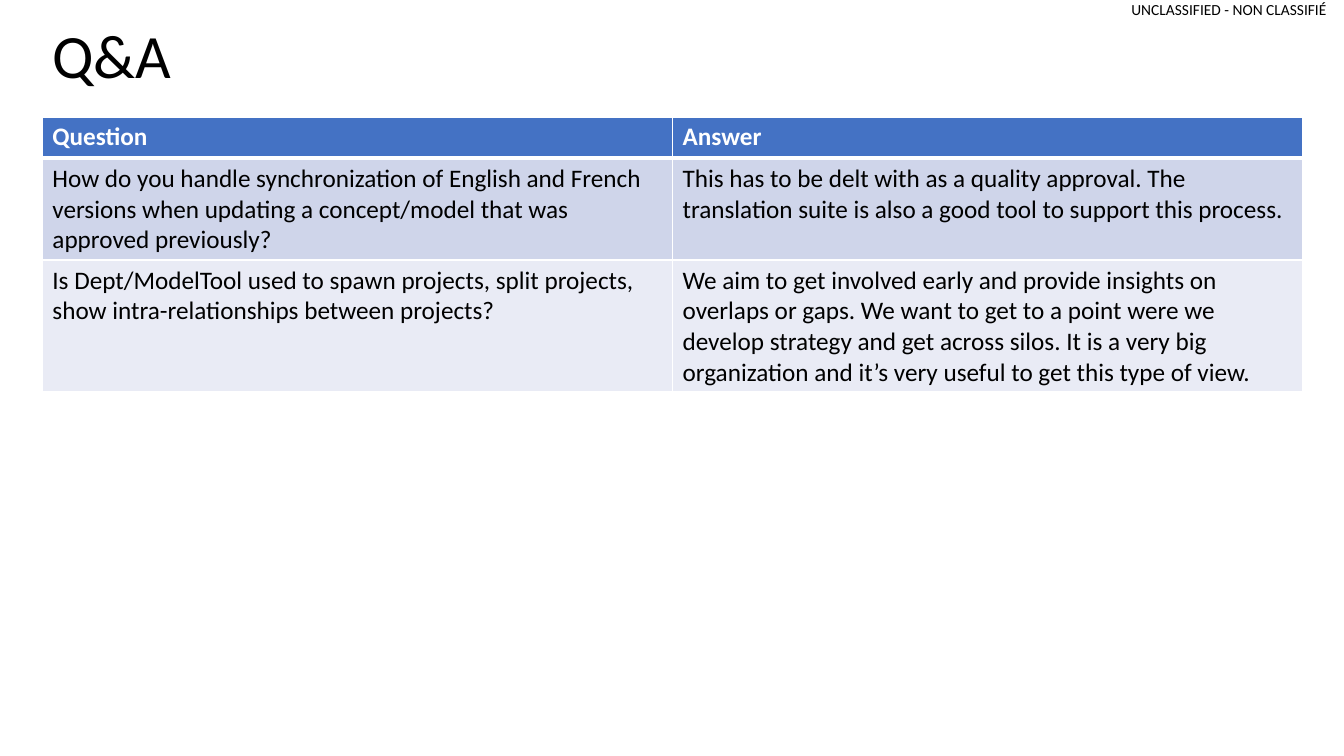
from lxml import etree
from pptx import Presentation
from pptx.dml.color import RGBColor
from pptx.enum.text import MSO_ANCHOR, PP_ALIGN
from pptx.oxml.ns import qn
from pptx.util import Inches, Pt

LEFT, RIGHT = PP_ALIGN.LEFT, PP_ALIGN.RIGHT
TOP, MIDDLE = MSO_ANCHOR.TOP, MSO_ANCHOR.MIDDLE

COLORS = {
    "black": "000000",
    "white": "FFFFFF",
    "head": "4472C4",
    "odd": "CFD5EA",
    "even": "E9EBF5",
}
ROWS = [
    ("Question", "Answer"),
    (
        "How do you handle synchronization of English and French versions "
        "when updating a concept/model that was approved previously?",
        "This has to be delt with as a quality approval. The translation "
        "suite is also a good tool to support this process.",
    ),
    (
        "Is Dept/ModelTool used to spawn projects, split projects, "
        "show intra-relationships between projects?",
        "We aim to get involved early and provide insights on overlaps or "
        "gaps. We want to get to a point were we develop strategy and get "
        "across silos. It is a very big organization and it’s very useful "
        "to get this type of view.",
    ),
]
HEIGHTS = [0.41, 1.01, 1.31]
FILLS = ["head", "odd", "even"]


def paint(fill, color):
    fill.solid()
    fill.fore_color.rgb = RGBColor.from_string(COLORS[color])


def apply(item, values):
    for name, value in values.items():
        setattr(item, name, value)


class Deck:
    font = "Calibri"

    def __init__(self):
        self.file = Presentation()
        self.file.slide_width = Inches(13.33)
        self.file.slide_height = Inches(7.5)
        self.slide = self.file.slides.add_slide(self.file.slide_layouts[6])
        paint(self.slide.background.fill, "white")

    def label(self, frame, text, size, color="black", bold=False, **style):
        line = frame.paragraphs[0]
        apply(line, style)
        run = line.add_run()
        run.text = text
        apply(run.font, {"name": self.font, "size": Pt(size), "bold": bold})
        run.font.color.rgb = RGBColor.from_string(COLORS[color])

    def text(self, box, text, size, frame, **style):
        shape = self.slide.shapes.add_textbox(*map(Inches, box))
        apply(shape.text_frame, {"word_wrap": True, **frame})
        self.label(shape.text_frame, text, size, **style)

    def border(self, cell, sides):
        props = cell._tc.get_or_add_tcPr()
        for side, width in sides.items():
            line = etree.SubElement(props, qn("a:ln" + side), w=str(Pt(width)))
            fill = etree.SubElement(line, qn("a:solidFill"))
            etree.SubElement(fill, qn("a:srgbClr"), val=COLORS["white"])

    def table(self, left, top, width, rows, heights, fills):
        count = len(rows[0])
        box = map(Inches, (left, top, width, sum(heights)))
        table = self.slide.shapes.add_table(len(rows), count, *box).table
        for column in table.columns:
            column.width = Inches(width / count)
        for r, (row, height, fill) in enumerate(zip(rows, heights, fills)):
            table.rows[r].height = Inches(height)
            head = r == 0
            sides = {"L": 1, "R": 1, "T": 3 if r == 1 else 1, "B": 3 if head else 1}
            for c, text in enumerate(row):
                cell = table.cell(r, c)
                self.border(cell, sides)
                paint(cell.fill, fill)
                self.label(cell.text_frame, text, 18, "white" if head else "black", head)

    def save(self):
        self.file.save("out.pptx")


def main():
    deck = Deck()
    sides = ("left", "right", "top", "bottom")
    flush = {"margin_" + side: 0 for side in sides}
    deck.text((11.2, 0, 1.96, 0.18), "UNCLASSIFIED - NON CLASSIFIÉ", 11,
              {"vertical_anchor": TOP, **flush}, alignment=RIGHT)
    deck.text((0.42, 0, 11.5, 1.16), "Q&A", 44,
              {"vertical_anchor": MIDDLE}, alignment=LEFT, line_spacing=0.9)
    deck.table(0.42, 1.16, 12.5, ROWS, HEIGHTS, FILLS)
    deck.save()


if __name__ == "__main__":
    main()
